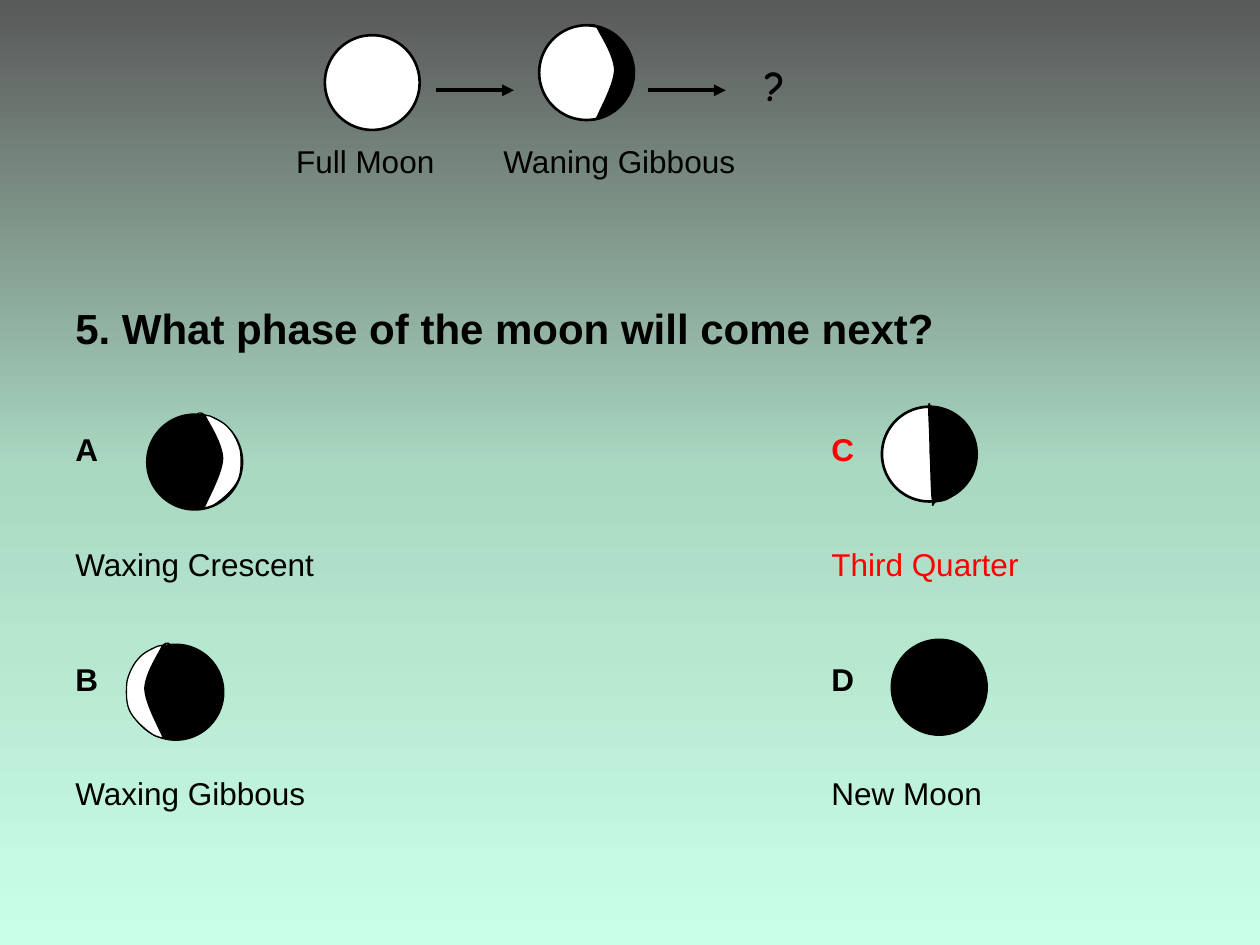
from copy import deepcopy

from lxml import etree
from pptx import Presentation
from pptx.dml.color import RGBColor
from pptx.enum.shapes import MSO_CONNECTOR, MSO_SHAPE
from pptx.enum.text import MSO_ANCHOR, PP_ALIGN
from pptx.oxml.ns import qn
from pptx.util import Cm, Pt

STRAIGHT = MSO_CONNECTOR.STRAIGHT
OVAL = MSO_SHAPE.OVAL
TOP = MSO_ANCHOR.TOP
CENTER = PP_ALIGN.CENTER

BLACK = RGBColor(0x00, 0x00, 0x00)
WHITE = RGBColor(0xFF, 0xFF, 0xFF)
RED = RGBColor(0xFF, 0x00, 0x00)
SKY_TOP = RGBColor(0x59, 0x59, 0x59)
SKY_MIDDLE = RGBColor(0xAA, 0xD9, 0xC2)
SKY_BOTTOM = RGBColor(0xCA, 0xFF, 0xE7)

MOON_SIZE = 1.91

CRESCENT = [
    (0.18, 0.13),
    (0.25, 0.28), (0.51, 0.66), (0.53, 0.97),
    (0.53, 1.24), (0.28, 1.7), (0.2, 1.88),
    (0.13, 2.06), (0.05, 1.98), (0.1, 1.98),
    (0.13, 1.98), (0.28, 1.98), (0.41, 1.88),
    (0.53, 1.8), (0.76, 1.6), (0.84, 1.42),
    (0.91, 1.27), (0.91, 1.02), (0.89, 0.84),
    (0.86, 0.69), (0.76, 0.48), (0.66, 0.38),
    (0.56, 0.25), (0.38, 0.18), (0.28, 0.13),
    (0.18, 0.1), (0.03, 0.1), (0.03, 0.1),
    (0, 0.1), (0.08, 0), (0.18, 0.13),
]
HALF = [
    (0, 0.13),
    (0, 0.28), (0.03, 0.74), (0.03, 1.07),
    (0.05, 1.37), (0.05, 1.9), (0.08, 2.06),
    (0.08, 2.24), (0.08, 2.08), (0.15, 2.06),
    (0.2, 2.06), (0.33, 2.06), (0.46, 1.96),
    (0.58, 1.88), (0.81, 1.68), (0.89, 1.52),
    (0.97, 1.35), (0.97, 1.12), (0.94, 0.94),
    (0.91, 0.76), (0.79, 0.58), (0.69, 0.46),
    (0.61, 0.33), (0.43, 0.25), (0.33, 0.2),
    (0.23, 0.18), (0.13, 0.2), (0.08, 0.18),
    (0, 0.18), (0.03, 0), (0, 0.13),
]

deck = Presentation()
deck.slide_width, deck.slide_height = Cm(25.4), Cm(19.05)
page = deck.slides.add_slide(deck.slide_layouts[6])


def add_text(shapes, area, lines, font="Arial", gap=0, tab=None):
    box = shapes.add_textbox(*[Cm(length) for length in area])
    frame = box.text_frame
    frame.word_wrap = True
    frame.vertical_anchor = TOP
    for number, pieces in enumerate(lines):
        para = frame.add_paragraph() if number else frame.paragraphs[0]
        para.space_before = Pt(gap if number else 0)
        if tab:
            tabs = etree.SubElement(para._p.get_or_add_pPr(), qn("a:tabLst"))
            etree.SubElement(tabs, qn("a:tab"), pos=str(Cm(tab)), algn="l")
        for text, size, bold, color in pieces:
            span = para.add_run()
            span.text = text
            span.font.name = font
            span.font.size = Pt(size)
            span.font.bold = bold
            span.font.color.rgb = color
    return box


def paint(shape, color, line_width):
    shape.shadow.inherit = False
    shape.fill.solid()
    shape.fill.fore_color.rgb = color
    shape.line.color.rgb = BLACK
    shape.line.width = Pt(line_width)


sky = page.background.fill
sky.gradient()
sky.gradient_angle = 270
stop_list = page.element.find(".//" + qn("a:gsLst"))
stop_list.append(deepcopy(stop_list[-1]))
sky_colors = [(0, SKY_TOP), (0.5, SKY_MIDDLE), (1, SKY_BOTTOM)]
for stop, (position, color) in zip(sky.gradient_stops, sky_colors):
    stop.position = position
    stop.color.rgb = color

question = [
    [("5. What phase of the moon will come next?", 24, True, BLACK)],
    [("A\t", 18, True, BLACK), ("C", 18, True, RED)],
    [("Waxing Crescent\t", 18, False, BLACK), ("Third Quarter", 18, False, RED)],
    [("B\tD", 18, True, BLACK)],
    [("Waxing Gibbous\tNew Moon", 18, False, BLACK)],
]
question_box = add_text(page.shapes, (1.27, 5.72, 22.86, 11.63), question, gap=44, tab=15.24)
question_box.text_frame.margin_top = Cm(0.38)

sequence = page.shapes.add_group_shape().shapes
for start, end in [(8.79, 10.36), (13.06, 14.63)]:
    arrow = sequence.add_connector(
        STRAIGHT, Cm(start), Cm(1.82), Cm(end), Cm(1.82))
    arrow.line.color.rgb = BLACK
    arrow.line.width = Pt(2.25)
    etree.SubElement(arrow.line._get_or_add_ln(), qn("a:tailEnd"), type="triangle")
    etree.SubElement(arrow._element.spPr, qn("a:effectLst"))

waxing_crescent = page.shapes.add_group_shape().shapes
third_quarter = page.shapes.add_group_shape().shapes
waxing_gibbous = page.shapes.add_group_shape().shapes

moons = [
    (sequence, 6.55, 0.71, WHITE),
    (sequence, 10.87, 0.51, WHITE),
    (waxing_crescent, 2.97, 8.36, BLACK),
    (third_quarter, 17.78, 8.2, WHITE),
    (waxing_gibbous, 2.59, 13, BLACK),
    (page.shapes, 17.98, 12.9, BLACK),
]
for shapes, left, top, color in moons:
    moon = shapes.add_shape(
        OVAL, Cm(left), Cm(top), Cm(MOON_SIZE), Cm(MOON_SIZE))
    paint(moon, color, 1.5)

phases = [
    (sequence, CRESCENT, 11.86, 0.43, 1, BLACK),
    (waxing_crescent, CRESCENT, 3.96, 8.26, 1, WHITE),
    (third_quarter, HALF, 18.72, 8.05, 1, BLACK),
    (waxing_gibbous, CRESCENT, 3.45, 12.9, -1, WHITE),
]
for shapes, outline, left, top, direction, color in phases:
    nodes = [(Cm(left + direction * x), Cm(top + y)) for x, y in outline]
    builder = shapes.build_freeform(*nodes[0])
    builder.add_line_segments(nodes[1:], close=True)
    phase = builder.convert_to_shape()
    segments = list(phase._element.iter(qn("a:lnTo")))
    for index in range(0, len(segments), 3):
        curve = etree.Element(qn("a:cubicBezTo"))
        segments[index].addprevious(curve)
        for segment in segments[index:index + 3]:
            curve.append(segment[0])
            segment.getparent().remove(segment)
    paint(phase, color, 0.75)

mark = add_text(sequence, (14.33, 1.07, 2.59, 1.98),
                [[("?", 24, True, BLACK)]], font="Comic Neue")
mark.text_frame.paragraphs[0].alignment = CENTER
mark.text_frame.paragraphs[0].space_after = Pt(10)

add_text(page.shapes, (5.72, 2.74, 14.17, 1.02),
         [[("Full Moon\tWaning Gibbous", 18, False, BLACK)]], tab=4.18)

deck.save("out.pptx")
